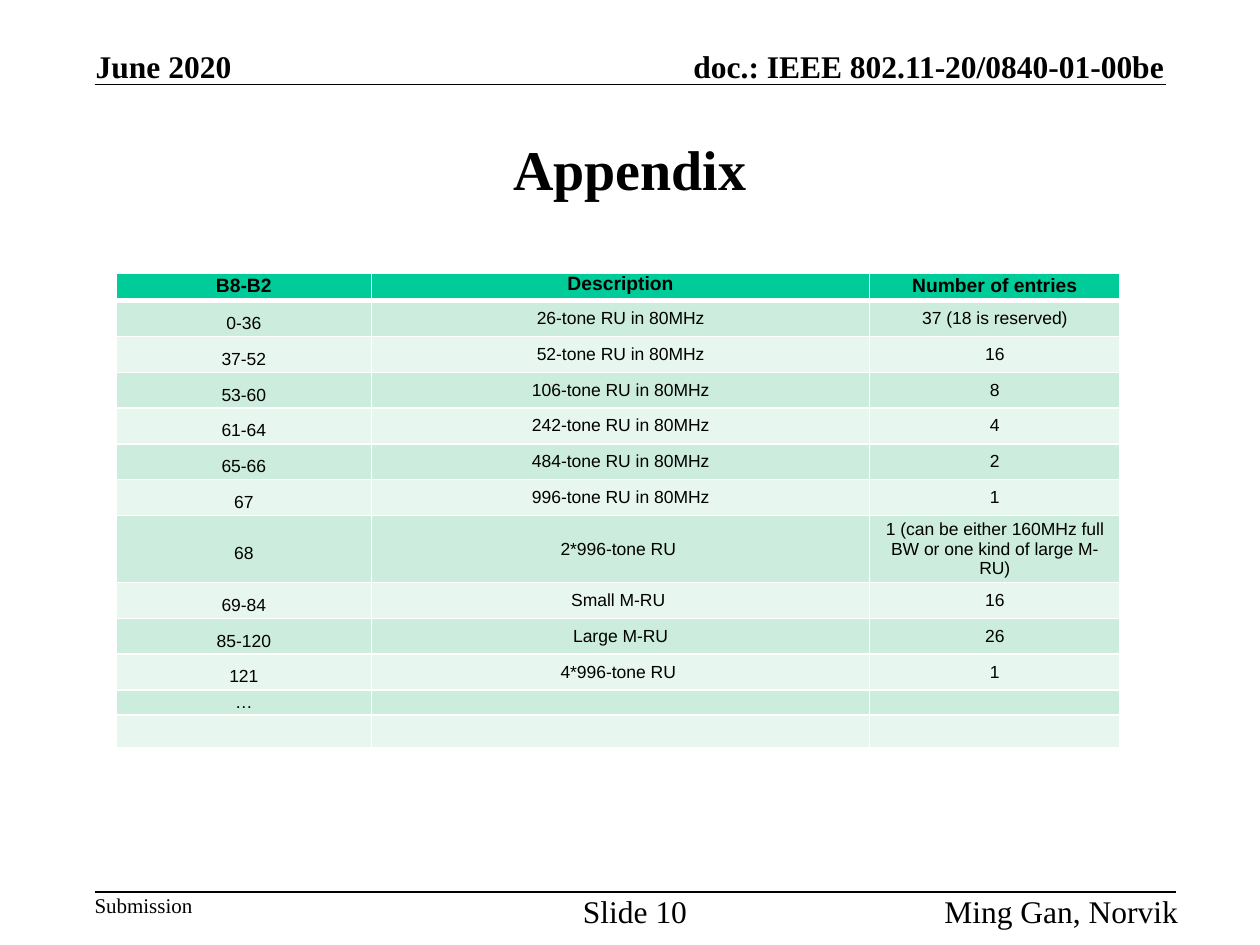
from dataclasses import dataclass

from lxml.etree import SubElement
from pptx import Presentation
from pptx.dml.color import RGBColor
from pptx.enum.shapes import MSO_CONNECTOR
from pptx.enum.text import MSO_ANCHOR, MSO_AUTO_SIZE, PP_ALIGN
from pptx.oxml.ns import qn
from pptx.util import Inches, Pt


@dataclass(frozen=True)
class Theme:
    ink: RGBColor = RGBColor.from_string("000000")
    header: RGBColor = RGBColor.from_string("00CC99")
    bands: tuple = (RGBColor.from_string("CCECDE"), RGBColor.from_string("E7F6EF"))
    border: str = "FFFFFF"
    serif: str = "Times New Roman"
    sans: str = "Arial"
    title: int = 32
    running: int = 18
    small: int = 12
    heading: int = 11
    body: int = 10


@dataclass(frozen=True)
class Label:
    text: str
    place: tuple
    size: int
    align: PP_ALIGN = PP_ALIGN.LEFT
    anchor: MSO_ANCHOR = MSO_ANCHOR.TOP
    bold: bool = False
    wrap: bool = False


@dataclass(frozen=True)
class Entry:
    bits: str = ""
    description: str = ""
    count: str = ""
    height: float = 0.28
    spacing: float = 1.5


THEME = Theme()
LABELS = (
    Label("doc.: IEEE 802.11-20/0840-01-00be", (4.96, 0.37, 4.28, 0.3), THEME.running,
          PP_ALIGN.RIGHT, MSO_ANCHOR.BOTTOM, bold=True),
    Label("June 2020", (0.76, 0.37, 1.09, 0.3), THEME.running,
          anchor=MSO_ANCHOR.BOTTOM, bold=True),
    Label("Appendix", (0.75, 0.75, 8.5, 1.17), THEME.title,
          PP_ALIGN.CENTER, MSO_ANCHOR.MIDDLE, bold=True, wrap=True),
    Label("Submission", (0.75, 7.08, 0.78, 0.2), THEME.small),
    Label("Slide 10", (4.59, 7.08, 0.9, 0.28), THEME.running, PP_ALIGN.CENTER),
    Label("Ming Gan, Norvik", (7.35, 7.08, 2, 0.28), THEME.running, PP_ALIGN.RIGHT),
)
COLUMN_WIDTHS = (2.03, 3.95, 1.99)
CELL_PADDING = 1.2 / 72
ENTRIES = (
    Entry("B8-B2", "Description", "Number of entries", 0.2, 1),
    Entry("0-36", "26-tone RU in 80MHz", "37 (18 is reserved)"),
    Entry("37-52", "52-tone RU in 80MHz", "16"),
    Entry("53-60", "106-tone RU in 80MHz", "8"),
    Entry("61-64", "242-tone RU in 80MHz", "4"),
    Entry("65-66", "484-tone RU in 80MHz", "2"),
    Entry("67", "996-tone RU in 80MHz", "1"),
    Entry("68", "2*996-tone RU ", "1 (can be either 160MHz full BW or one kind of large M-RU)", 0.51),
    Entry("69-84", "Small M-RU ", "16"),
    Entry("85-120", "Large M-RU", "26"),
    Entry("121", "4*996-tone RU ", "1"),
    Entry("…", height=0.2, spacing=1),
    Entry(height=0.26, spacing=1),
)


def write(frame, text: str, *, font: str, size: int, bold: bool = False,
          align: PP_ALIGN = PP_ALIGN.LEFT, spacing: float = 1) -> None:
    paragraph = frame.paragraphs[0]
    paragraph.alignment = align
    if spacing != 1:
        paragraph.line_spacing = spacing
    if not text:
        paragraph._p.get_or_add_endParaRPr().set("sz", str(size * 100))
        return
    span = paragraph.add_run()
    span.text = text
    span.font.name = font
    span.font.size = Pt(size)
    span.font.bold = bold
    span.font.color.rgb = THEME.ink


def draw_label(page, label: Label) -> None:
    box = page.shapes.add_textbox(*map(Inches, label.place))
    frame = box.text_frame
    frame.word_wrap = label.wrap
    frame.vertical_anchor = label.anchor
    if not label.wrap:
        frame.auto_size = MSO_AUTO_SIZE.SHAPE_TO_FIT_TEXT
        frame.margin_left = frame.margin_right = 0
        frame.margin_top = frame.margin_bottom = 0
    write(frame, label.text, font=THEME.serif, size=label.size,
          bold=label.bold, align=label.align)


def draw_rule(page, left: float, right: float, top: float) -> None:
    rule = page.shapes.add_connector(
        MSO_CONNECTOR.STRAIGHT, Inches(left), Inches(top), Inches(right), Inches(top))
    rule.line.color.rgb = THEME.ink
    rule.line.width = Pt(1)
    SubElement(rule._element.spPr, qn("a:effectLst"))


def set_borders(cell, top: int, bottom: int) -> None:
    properties = cell._tc.get_or_add_tcPr()
    widths = {"a:lnL": 1, "a:lnR": 1, "a:lnT": top, "a:lnB": bottom}
    for tag, width in widths.items():
        edge = SubElement(properties, qn(tag), w=str(Pt(width)))
        fill = SubElement(edge, qn("a:solidFill"))
        SubElement(fill, qn("a:srgbClr"), val=THEME.border)


def draw_cell(cell, text: str, row: int, column: int, spacing: float) -> None:
    is_header = row == 0
    set_borders(cell, top=3 if row == 1 else 1, bottom=3 if is_header else 1)
    cell.fill.solid()
    cell.fill.fore_color.rgb = THEME.header if is_header else THEME.bands[(row - 1) % 2]
    cell.vertical_anchor = MSO_ANCHOR.TOP if is_header else MSO_ANCHOR.MIDDLE
    is_middle = column == 1
    cell.margin_left = cell.margin_right = Inches(0 if is_middle else 0.05)
    cell.margin_top = cell.margin_bottom = Inches(0 if is_middle else CELL_PADDING)
    write(cell.text_frame, text, font=THEME.sans, bold=is_header,
          size=THEME.heading if is_header else THEME.body,
          align=PP_ALIGN.CENTER, spacing=spacing if column == 0 else 1)


def draw_table(page) -> None:
    height = sum(entry.height for entry in ENTRIES)
    table = page.shapes.add_table(
        len(ENTRIES), len(COLUMN_WIDTHS), Inches(0.92), Inches(2.17),
        Inches(sum(COLUMN_WIDTHS)), Inches(height)).table
    for column, width in zip(table.columns, COLUMN_WIDTHS):
        column.width = Inches(width)
    for row, entry in enumerate(ENTRIES):
        table.rows[row].height = Inches(entry.height)
        for column, text in enumerate((entry.bits, entry.description, entry.count)):
            draw_cell(table.cell(row, column), text, row, column, entry.spacing)


def main() -> None:
    deck = Presentation()
    deck.slide_width, deck.slide_height = Inches(10), Inches(7.5)
    page = deck.slides.add_slide(deck.slide_layouts[6])
    draw_rule(page, 0.75, 9.25, 0.67)
    draw_rule(page, 0.75, 9.33, 7.08)
    for label in LABELS:
        draw_label(page, label)
    draw_table(page)
    deck.save("out.pptx")


if __name__ == "__main__":
    main()
